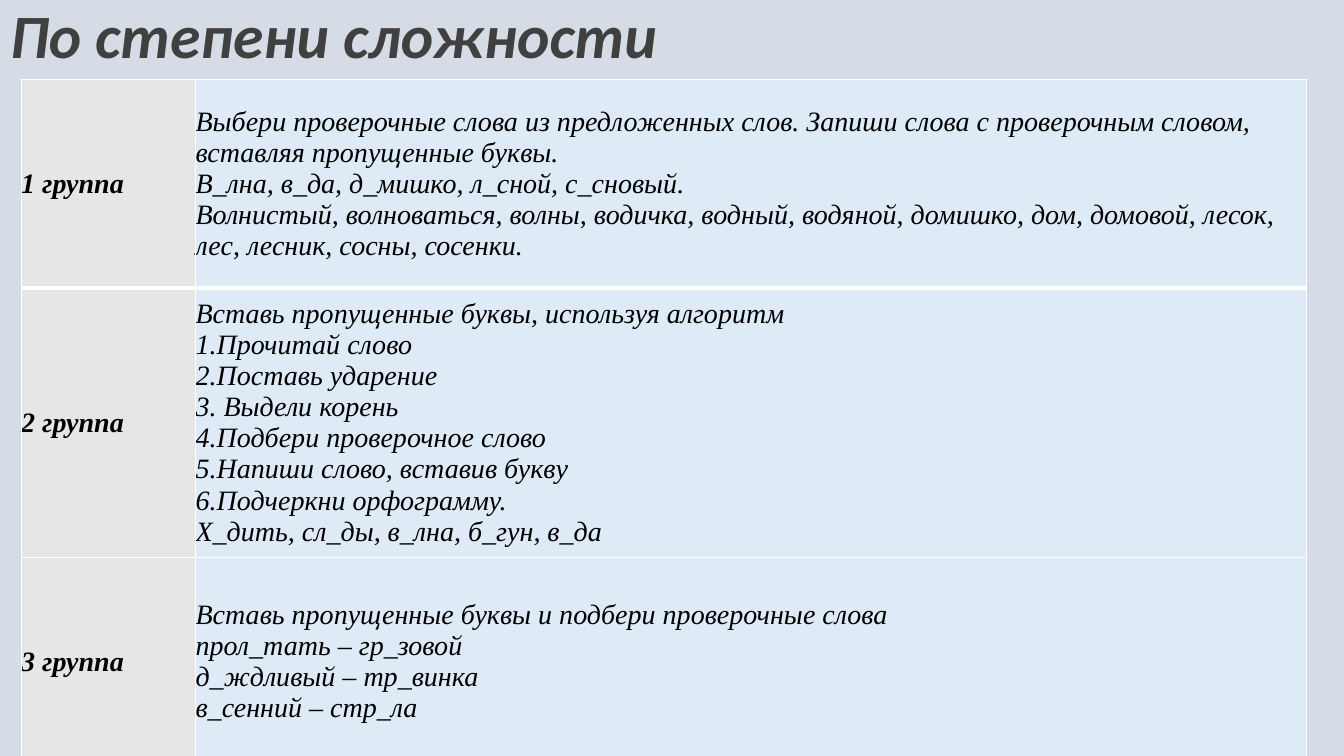
from dataclasses import dataclass

from lxml.etree import SubElement
from pptx import Presentation
from pptx.dml.color import RGBColor
from pptx.enum.text import MSO_ANCHOR, MSO_AUTO_SIZE, PP_ALIGN
from pptx.oxml.ns import qn
from pptx.util import Inches, Pt


@dataclass(frozen=True)
class Theme:
    background: str = "D6DCE5"
    heading: str = "404040"
    text: str = "000000"
    group_fill: str = "E7E6E6"
    task_fill: str = "DEEBF7"
    border: str = "FFFFFF"
    heading_font: str = "Calibri"
    table_font: str = "Times New Roman"
    heading_size: int = 44
    table_size: int = 20
    thin: int = 1
    thick: int = 3


THEME = Theme()
SLIDE_WIDTH, SLIDE_HEIGHT = 13.33, 7.5
TABLE_LEFT, TABLE_TOP = 0.21, 0.79
COLUMN_WIDTHS = (1.73, 11.02)
ROW_HEIGHTS = (2.07, 2.67, 2.07)

HEADING = "По степени сложности"
GROUPS = (
    ("1 группа", (
        "Выбери проверочные слова из предложенных слов. "
        "Запиши слова с проверочным словом, вставляя пропущенные буквы.",
        "В_лна, в_да, д_мишко, л_сной, с_сновый.",
        "Волнистый, волноваться, волны, водичка, водный, водяной, "
        "домишко, дом, домовой, лесок, лес, лесник, сосны, сосенки.",
    )),
    ("2 группа", (
        "Вставь пропущенные буквы, используя алгоритм",
        "1.Прочитай слово",
        "2.Поставь ударение",
        "3. Выдели корень",
        "4.Подбери проверочное слово",
        "5.Напиши слово, вставив букву",
        "6.Подчеркни орфограмму.",
        "Х_дить, сл_ды, в_лна, б_гун, в_да",
    )),
    ("3 группа", (
        "Вставь пропущенные буквы и подбери проверочные слова",
        "прол_тать – гр_зовой",
        "д_ждливый – тр_винка",
        "в_сенний – стр_ла",
    )),
)


def style_text(frame, font_name, size, color, bold):
    for paragraph in frame.paragraphs:
        paragraph.alignment = PP_ALIGN.LEFT
        for run in paragraph.runs:
            run.font.name = font_name
            run.font.size = Pt(size)
            run.font.bold = bold
            run.font.italic = True
            run.font.color.rgb = RGBColor.from_string(color)


def add_heading(slide):
    heading = slide.shapes.title
    heading.left = heading.top = 0
    heading.width = Inches(SLIDE_WIDTH * 0.916)
    heading.height = Inches(SLIDE_HEIGHT * 0.9)
    frame = heading.text_frame
    frame.text = HEADING
    frame.word_wrap = True
    frame.auto_size = MSO_AUTO_SIZE.NONE
    frame.vertical_anchor = MSO_ANCHOR.TOP
    frame.paragraphs[0].line_spacing = 0.9
    frame.paragraphs[0].space_before = Pt(10)
    style_text(frame, THEME.heading_font, THEME.heading_size, THEME.heading, True)


def set_borders(cell, top, bottom):
    properties = cell._tc.get_or_add_tcPr()
    widths = {"lnL": THEME.thin, "lnR": THEME.thin, "lnT": top, "lnB": bottom}
    for position, (side, width) in enumerate(widths.items()):
        line = SubElement(properties, qn(f"a:{side}"), w=str(Pt(width)))
        solid = SubElement(line, qn("a:solidFill"))
        SubElement(solid, qn("a:srgbClr"), val=THEME.border)
        properties.insert(position, line)


def fill_cell(cell, lines, fill, bold):
    cell.margin_left = cell.margin_right = cell.margin_top = cell.margin_bottom = 0
    cell.vertical_anchor = MSO_ANCHOR.MIDDLE
    cell.fill.solid()
    cell.fill.fore_color.rgb = RGBColor.from_string(fill)
    cell.text_frame.text = "\n".join(lines)
    style_text(cell.text_frame, THEME.table_font, THEME.table_size, THEME.text, bold)


def add_groups_table(slide):
    table = slide.shapes.add_table(
        len(GROUPS), len(COLUMN_WIDTHS), Inches(TABLE_LEFT), Inches(TABLE_TOP),
        Inches(sum(COLUMN_WIDTHS)), Inches(sum(ROW_HEIGHTS)),
    ).table
    for column, width in zip(table.columns, COLUMN_WIDTHS):
        column.width = Inches(width)
    for index, (group, tasks) in enumerate(GROUPS):
        table.rows[index].height = Inches(ROW_HEIGHTS[index])
        group_cell, task_cell = table.rows[index].cells
        fill_cell(group_cell, (group,), THEME.group_fill, True)
        fill_cell(task_cell, tasks, THEME.task_fill, False)
        top = THEME.thick if index == 1 else THEME.thin
        bottom = THEME.thick if index == 0 else THEME.thin
        for cell in (group_cell, task_cell):
            set_borders(cell, top, bottom)


def main():
    presentation = Presentation()
    presentation.slide_width = Inches(SLIDE_WIDTH)
    presentation.slide_height = Inches(SLIDE_HEIGHT)
    slide = presentation.slides.add_slide(presentation.slide_layouts.get_by_name("Title Only"))
    slide.background.fill.solid()
    slide.background.fill.fore_color.rgb = RGBColor.from_string(THEME.background)
    add_heading(slide)
    add_groups_table(slide)
    presentation.save("out.pptx")


if __name__ == "__main__":
    main()
